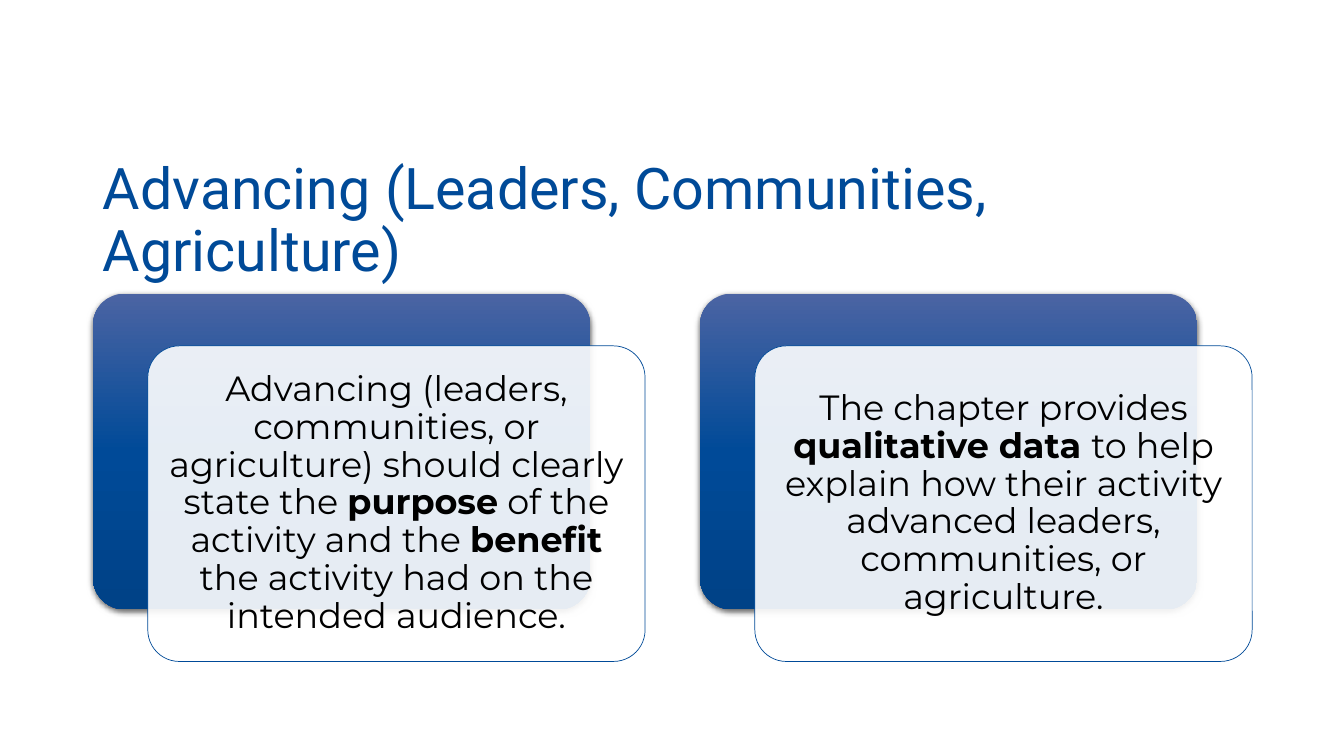
import copy

import pptx
import pptx.dml.color
import pptx.enum.shapes
import pptx.enum.text
import pptx.oxml
import pptx.oxml.ns
import pptx.util

COLORS = {"blue": "004A98", "light blue": "4B64A3", "dark blue": "004287",
          "white": "FFFFFF", "black": "000000"}
GRADIENT = [(0, "light blue"), (0.5, "blue"), (1, "dark blue")]
COLUMNS, ROWS = 12, 12
MARGIN = 0.83
CARD_TOP, CARD_PITCH = 4.66, 5.42
CARD_WIDTH, CARD_HEIGHT = 4.44, 5.01
PANEL_SHIFT_X, PANEL_SHIFT_Y = 0.49, 0.83
CARDS = [
    [("Advancing (leaders, communities, or agriculture) should clearly state the ", False),
     ("purpose", True), (" of the activity and the ", False), ("benefit", True),
     (" the activity had on the intended audience.", False)],
    [("The chapter provides ", False), ("qualitative data ", True),
     ("to help explain how their activity advanced leaders, communities, or agriculture.", False)],
]


def color(name):
    return pptx.dml.color.RGBColor.from_string(COLORS[name])


class SlideBuilder:
    """Draws styled elements on one slide, measured in grid columns and rows."""

    def __init__(self, presentation):
        self.slide = presentation.slides.add_slide(presentation.slide_layouts[6])
        self.column = presentation.slide_width / COLUMNS
        self.row = presentation.slide_height / ROWS

    def place(self, left, top, width, height):
        return (round(left * self.column), round(top * self.row),
                round(width * self.column), round(height * self.row))

    def add_text(self, shape, runs, font, size, color_name):
        frame = shape.text_frame
        frame.word_wrap = True
        frame.vertical_anchor = pptx.enum.text.MSO_ANCHOR.MIDDLE
        paragraph = frame.paragraphs[0]
        paragraph.line_spacing = 0.9
        paragraph.font.name = font
        paragraph.font.size = pptx.util.Pt(size)
        paragraph.font.color.rgb = color(color_name)
        for text, bold in runs:
            run = paragraph.add_run()
            run.text = text
            if bold:
                run.font.bold = True
        return paragraph

    def title(self, text, *grid):
        box = self.slide.shapes.add_textbox(*self.place(*grid))
        self.add_text(box, [(text, False)], "Roboto", 41, "blue")

    def rounded(self, *grid):
        shape = self.slide.shapes.add_shape(
            pptx.enum.shapes.MSO_SHAPE.ROUNDED_RECTANGLE, *self.place(*grid))
        shape.adjustments[0] = 0.1
        shape.shadow.inherit = False
        return shape

    def backdrop(self, *grid):
        shape = self.rounded(*grid)
        shape.line.fill.background()
        shape.fill.gradient()
        shape.fill.gradient_angle = 270
        properties = shape.element.spPr
        stop_list = properties.xpath(".//a:gsLst")[0]
        stop_list.append(copy.deepcopy(stop_list[0]))
        for stop, (position, name) in zip(shape.fill.gradient_stops, GRADIENT):
            stop.position = position
            stop.color.rgb = color(name)
        properties.xpath("a:effectLst")[0].append(pptx.oxml.parse_xml(
            f'<a:outerShdw {pptx.oxml.ns.nsdecls("a")} blurRad="{pptx.util.Pt(4.5)}" '
            f'dist="{pptx.util.Pt(1.5)}" dir="5400000" algn="ctr" rotWithShape="0">'
            f'<a:srgbClr val="{COLORS["black"]}"><a:alpha val="63000"/></a:srgbClr>'
            '</a:outerShdw>'))

    def panel(self, runs, *grid):
        shape = self.rounded(*grid)
        shape.fill.solid()
        shape.fill.fore_color.rgb = color("white")
        fill_color = shape.element.spPr.xpath("a:solidFill/a:srgbClr")[0]
        fill_color.append(pptx.oxml.parse_xml(
            f'<a:alpha {pptx.oxml.ns.nsdecls("a")} val="90000"/>'))
        shape.line.color.rgb = color("blue")
        shape.line.width = pptx.util.Pt(0.5)
        frame = shape.text_frame
        frame.margin_left = frame.margin_right = pptx.util.Inches(0.1)
        frame.margin_top = frame.margin_bottom = pptx.util.Inches(0.1)
        paragraph = self.add_text(shape, runs, "Montserrat", 25, "black")
        paragraph.alignment = pptx.enum.text.PP_ALIGN.CENTER

    def card(self, runs, left, top):
        self.backdrop(left, top, CARD_WIDTH, CARD_HEIGHT)
        self.panel(runs, left + PANEL_SHIFT_X, top + PANEL_SHIFT_Y, CARD_WIDTH, CARD_HEIGHT)


def main():
    presentation = pptx.Presentation()
    presentation.slide_width = pptx.util.Inches(13.33)
    presentation.slide_height = pptx.util.Inches(7.5)
    builder = SlideBuilder(presentation)
    builder.title("Advancing (Leaders, Communities, Agriculture)", MARGIN, 2.82, 10.35, 1.39)
    for index, runs in enumerate(CARDS):
        builder.card(runs, MARGIN + index * CARD_PITCH, CARD_TOP)
    presentation.save("out.pptx")


if __name__ == "__main__":
    main()
